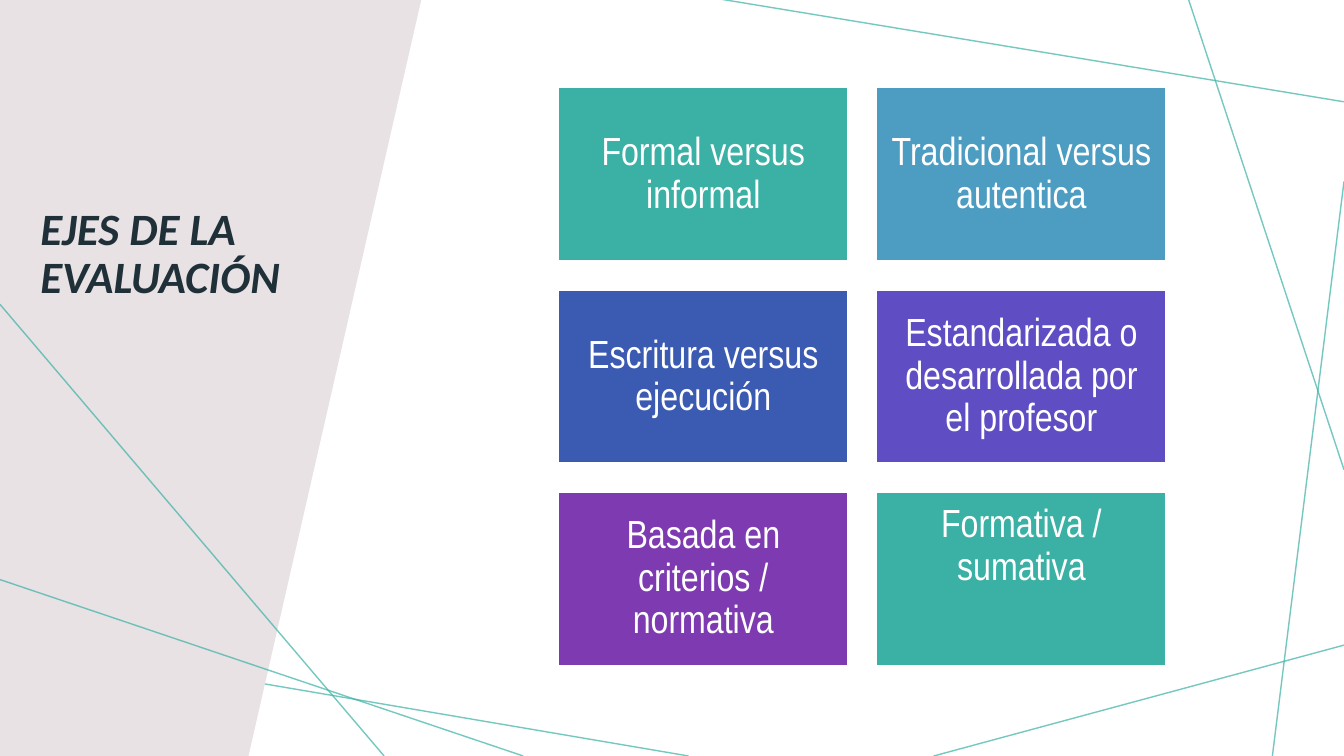
import pptx
import pptx.dml.color
import pptx.enum.shapes
import pptx.enum.text
import pptx.util
from lxml import etree
from pptx.oxml.ns import qn

Inches = pptx.util.Inches
Pt = pptx.util.Pt
RGB = pptx.dml.color.RGBColor
ANCHOR = pptx.enum.text.MSO_ANCHOR
ALIGN = pptx.enum.text.PP_ALIGN

WHITE = RGB(0xFF, 0xFF, 0xFF)
TEAL = RGB(0x3B, 0xB1, 0xA6)
SKY = RGB(0x4D, 0x9D, 0xC3)
BLUE = RGB(0x3B, 0x5A, 0xB1)
VIOLET = RGB(0x5F, 0x4D, 0xC3)
PURPLE = RGB(0x7E, 0x3B, 0xB1)
PANEL = RGB(0xE8, 0xE2, 0xE5)
INK = RGB(0x20, 0x30, 0x38)

BACK_LINES = [
    (3.41, 0, 0, 0.75),
    (0.99, 0, 0, 7.16),
    (6.83, 7.5, -0.05, 6.33),
    (13.33, 6.4, 9.26, 7.5),
    (13.33, 1.8, 12.62, 7.5),
    (13.33, 4.66, 11.79, 0),
    (13.33, 1.01, 7.14, -0.01),
]
FRONT_LINES = [(0, 3.02, 3.81, 7.5), (5.19, 7.5, 0, 5.75)]
EDGE = [(0, -0.01), (4.18, -0.01), (2.46, 7.52), (0, 7.54)]

CARDS = [
    ("Formal versus informal", TEAL),
    ("Tradicional versus autentica", SKY),
    ("Escritura versus ejecución", BLUE),
    ("Estandarizada o desarrollada por el profesor", VIOLET),
    ("Basada en criterios / normativa", PURPLE),
    ("Formativa / sumativa", TEAL),
]
LEFT, TOP = 5.54, 0.87
WIDE, HIGH = 2.87, 1.72
STEP_X, STEP_Y = 3.155, 2.005


class Deck:
    def __init__(self):
        self.prs = pptx.Presentation()
        self.prs.slide_width = Inches(13.33)
        self.prs.slide_height = Inches(7.5)
        self.slide = self.prs.slides.add_slide(self.prs.slide_layouts[5])
        self.shapes = self.slide.shapes

    def style(self, text, face, size, color):
        """Format every paragraph and run of a text frame."""
        for para in text.paragraphs:
            para.line_spacing = 0.9
            for run in para.runs:
                run.font.name = face
                run.font.size = Pt(size)
                run.font.color.rgb = color

    def line(self, x1, y1, x2, y2):
        """Draw a thin, partly transparent teal line."""
        line = self.shapes.add_connector(
            pptx.enum.shapes.MSO_CONNECTOR.STRAIGHT,
            Inches(x1), Inches(y1), Inches(x2), Inches(y2))
        line.line.width = Pt(1)
        line.line.color.rgb = TEAL
        props = line.element.spPr
        tint = next(props.iter(qn("a:srgbClr")))
        etree.SubElement(tint, qn("a:alpha")).set("val", "70000")
        etree.SubElement(props, qn("a:effectLst"))

    def panel(self, points, color):
        spots = [(Inches(x), Inches(y)) for x, y in points]
        form = self.shapes.build_freeform(*spots[0])
        form.add_line_segments(spots[1:], close=True)
        shape = form.convert_to_shape()
        shape.shadow.inherit = False
        shape.fill.solid()
        shape.fill.fore_color.rgb = color
        shape.line.fill.background()

    def title(self, words):
        """Place the title above the shapes drawn so far."""
        title = self.shapes.title
        title.element.getparent().append(title.element)
        title.left, title.top = Inches(0.3), Inches(2)
        title.width, title.height = Inches(2.7), Inches(2.03)
        text = title.text_frame
        text.text = words
        text.word_wrap = True
        text.auto_size = pptx.enum.text.MSO_AUTO_SIZE.NONE
        text.vertical_anchor = ANCHOR.TOP
        self.style(text, "Calibri", 32, INK)
        para = text.paragraphs[0]
        para.alignment = ALIGN.LEFT
        para.runs[0].font.bold = True
        para.runs[0].font.italic = True

    def card(self, x, y, words, color, anchor):
        card = self.shapes.add_shape(
            pptx.enum.shapes.MSO_SHAPE.RECTANGLE,
            Inches(x), Inches(y), Inches(WIDE), Inches(HIGH))
        card.shadow.inherit = False
        card.fill.solid()
        card.fill.fore_color.rgb = color
        card.line.color.rgb = WHITE
        card.line.width = Pt(1)
        text = card.text_frame
        text.text = words
        text.word_wrap = True
        text.vertical_anchor = anchor
        text.margin_left = text.margin_right = Inches(0.12)
        text.margin_top = text.margin_bottom = Inches(0.12)
        text.paragraphs[0].alignment = ALIGN.CENTER
        self.style(text, "Arial Narrow", 28, WHITE)


def main():
    deck = Deck()
    for ends in BACK_LINES:
        deck.line(*ends)
    deck.panel(EDGE, PANEL)
    deck.title("EJES DE LA EVALUACIÓN")
    for ends in FRONT_LINES:
        deck.line(*ends)
    for i, (words, color) in enumerate(CARDS):
        row, col = divmod(i, 2)
        anchor = ANCHOR.TOP if i == len(CARDS) - 1 else ANCHOR.MIDDLE
        deck.card(LEFT + col * STEP_X, TOP + row * STEP_Y,
                  words, color, anchor)
    deck.prs.save("out.pptx")


if __name__ == "__main__":
    main()
